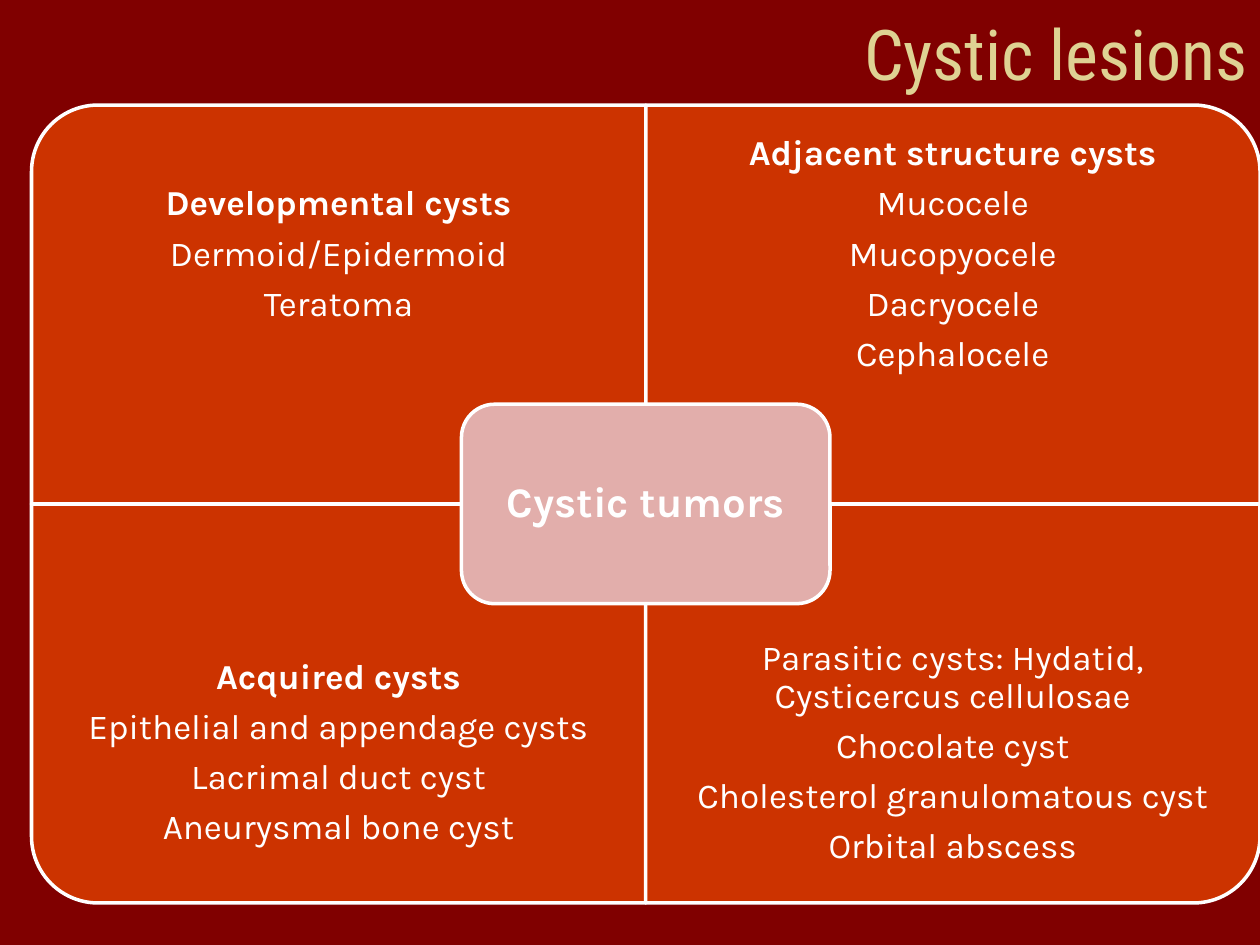
from dataclasses import dataclass

from pptx import Presentation
from pptx import util as u
from pptx.dml.color import RGBColor
from pptx.enum import shapes, text

Pt = u.Pt

MAROON = RGBColor(0x80, 0x00, 0x00)
SAND = RGBColor(0xDF, 0xD2, 0x93)
ORANGE = RGBColor(0xCC, 0x33, 0x00)
PINK = RGBColor(0xE2, 0xAE, 0xAB)
WHITE = RGBColor(0xFF, 0xFF, 0xFF)

# Matrix geometry in points
LEFT, TOP = 18, 60
CELL_W, CELL_H = 351, 228
LABEL_H = CELL_H * 0.75
CENTER_W, CENTER_H = CELL_W * 0.6, CELL_H * 0.5


@dataclass
class Quadrant:
    col: int
    row: int
    rotation: int
    lines: list[str]
    heading: bool = True


QUADRANTS = [
    Quadrant(0, 0, 270, ["Developmental cysts", "Dermoid/Epidermoid", "Teratoma"]),
    Quadrant(1, 0, 0, ["Adjacent structure cysts", "Mucocele", "Mucopyocele",
                       "Dacryocele", "Cephalocele"]),
    Quadrant(0, 1, 180, ["Acquired cysts", "Epithelial and appendage cysts",
                         "Lacrimal duct cyst", "Aneurysmal bone cyst"]),
    Quadrant(1, 1, 90, ["Parasitic cysts: Hydatid, Cysticercus cellulosae",
                        "Chocolate cyst", "Cholesterol granulomatous cyst",
                        "Orbital abscess"], heading=False),
]


def add_panel(s, kind, cx: float, cy: float, w: float, h: float,
              fill: RGBColor, rotation: int = 0) -> None:
    """Draw an outlined panel around a centre; w and h are as seen on the slide."""
    if rotation % 180:
        w, h = h, w
    sp = s.shapes.add_shape(kind, Pt(cx - w / 2), Pt(cy - h / 2), Pt(w), Pt(h))
    sp.rotation = rotation
    sp.shadow.inherit = False
    sp.fill.solid()
    sp.fill.fore_color.rgb = fill
    sp.line.color.rgb = WHITE
    sp.line.width = Pt(2)


def add_label(s, x: float, y: float, w: float, h: float, lines: list[str],
              size: float, heading: bool = True, inset: float = 7.2,
              color: RGBColor = WHITE, name: str = "Karla",
              align=text.PP_ALIGN.CENTER, spacing: float = 0.9) -> None:
    """Write middle-anchored lines, the first one bold when it is a heading."""
    tf = s.shapes.add_textbox(Pt(x), Pt(y), Pt(w), Pt(h)).text_frame
    frame_format = {"word_wrap": True, "vertical_anchor": text.MSO_ANCHOR.MIDDLE}
    for side in ("left", "right", "top", "bottom"):
        frame_format[f"margin_{side}"] = Pt(inset)
    for key, value in frame_format.items():
        setattr(tf, key, value)
    for i, line in enumerate(lines):
        p = tf.paragraphs[0] if i == 0 else tf.add_paragraph()
        paragraph_format = {"alignment": align, "line_spacing": spacing,
                            "space_before": Pt(0), "space_after": Pt(size * 0.35)}
        for key, value in paragraph_format.items():
            setattr(p, key, value)
        r = p.add_run()
        r.text = line
        font_format = {"name": name, "size": Pt(size), "bold": heading and i == 0}
        for key, value in font_format.items():
            setattr(r.font, key, value)
        r.font.color.rgb = color


def main() -> None:
    prs = Presentation()
    prs.slide_width, prs.slide_height = Pt(720), Pt(540)
    s = prs.slides.add_slide(prs.slide_layouts[6])
    s.background.fill.solid()
    s.background.fill.fore_color.rgb = MAROON

    # Title
    add_label(s, 0, 0, 720, TOP, ["Cystic lesions"], 40, heading=False, inset=7.2,
              color=SAND, name="Roboto Condensed", align=text.PP_ALIGN.RIGHT,
              spacing=1.0)

    # Four quadrants, each label against the outer edge
    for q in QUADRANTS:
        x, y = LEFT + q.col * CELL_W, TOP + q.row * CELL_H
        add_panel(s, shapes.MSO_SHAPE.ROUND_1_RECTANGLE, x + CELL_W / 2,
                  y + CELL_H / 2, CELL_W, CELL_H, ORANGE, q.rotation)
        add_label(s, x, y + q.row * (CELL_H - LABEL_H), CELL_W, LABEL_H,
                  q.lines, 20, q.heading, inset=11.5)

    # Centre panel
    cx, cy = LEFT + CELL_W, TOP + CELL_H
    add_panel(s, shapes.MSO_SHAPE.ROUNDED_RECTANGLE, cx, cy, CENTER_W, CENTER_H, PINK)
    add_label(s, cx - CENTER_W / 2, cy - CENTER_H / 2, CENTER_W, CENTER_H,
              ["Cystic tumors"], 24)

    prs.save("out.pptx")


if __name__ == "__main__":
    main()
